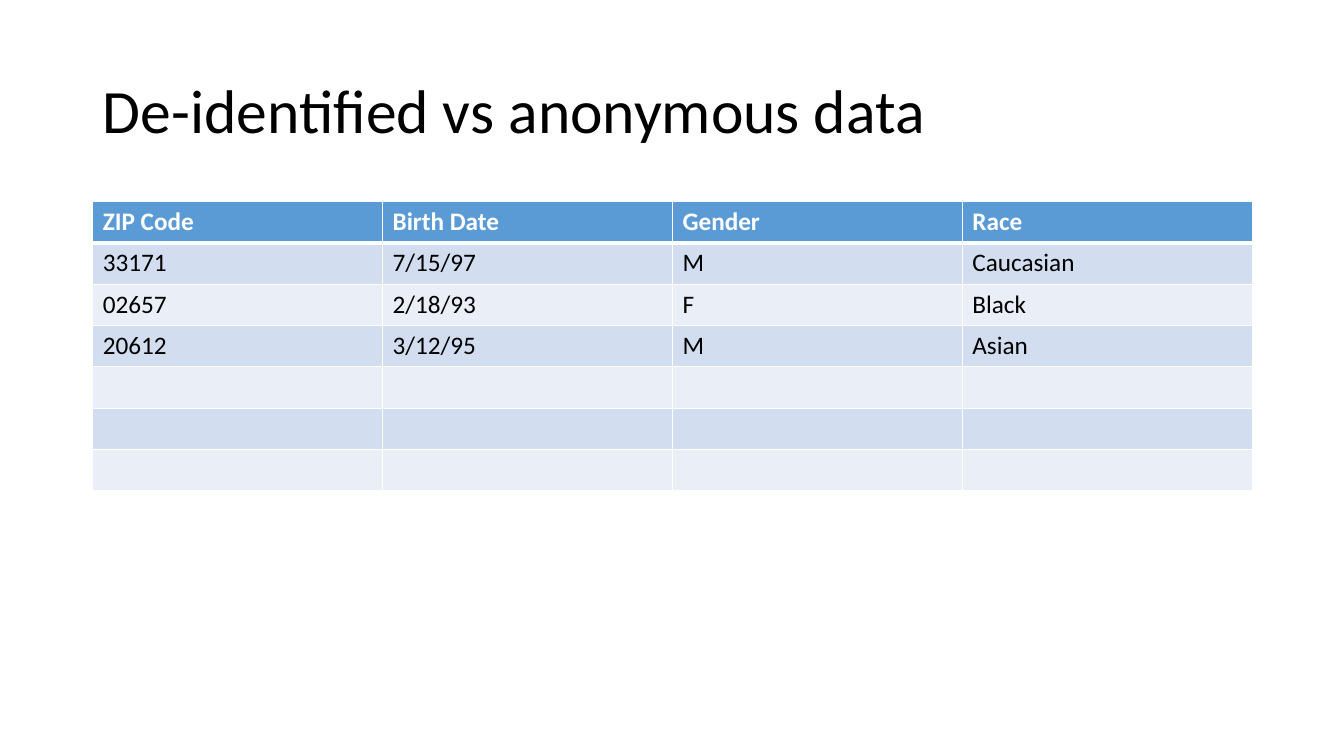
from lxml import etree
from pptx import Presentation
from pptx.dml.color import RGBColor
from pptx.enum.text import MSO_ANCHOR, PP_ALIGN
from pptx.oxml.ns import qn
from pptx.util import Inches, Pt

COLORS = {
    "text": "000000",
    "white": "FFFFFF",
    "header": "5B9BD5",
    "odd_row": "D2DEEF",
    "even_row": "EAEFF7",
}
FONT = "Calibri"
LEFT, WIDTH = 0.92, 11.5
TABLE_TOP, ROW_HEIGHT = 2, 0.41
HEADERS = ["ZIP Code", "Birth Date", "Gender", "Race"]
RECORDS = [
    ["33171", "7/15/97", "M", "Caucasian"],
    ["02657", "2/18/93", "F", "Black"],
    ["20612", "3/12/95", "M", "Asian"],
]
EMPTY_ROWS = 3


def rgb(name):
    return RGBColor.from_string(COLORS[name])


def format_font(font, color, **values):
    for key, value in {"name": FONT, **values}.items():
        setattr(font, key, value)
    font.color.rgb = rgb(color)


def add_title(s, text):
    sp = s.shapes.title
    box = {"left": LEFT, "top": 0.4, "width": WIDTH, "height": 1.45}
    for key, value in box.items():
        setattr(sp, key, Inches(value))
    tf = sp.text_frame
    tf.text = text
    tf.word_wrap = True
    tf.vertical_anchor = MSO_ANCHOR.MIDDLE
    p = tf.paragraphs[0]
    p.alignment = PP_ALIGN.LEFT
    p.line_spacing = 0.9
    format_font(p.runs[0].font, "text", size=Pt(44), bold=False)


def set_borders(cell, widths):
    tc_pr = cell._tc.get_or_add_tcPr()
    for i, (side, width) in enumerate(widths.items()):
        ln = etree.Element(qn(f"a:ln{side}"), w=str(Pt(width)))
        fill = etree.SubElement(ln, qn("a:solidFill"))
        etree.SubElement(fill, qn("a:srgbClr"), val=COLORS["white"])
        tc_pr.insert(i, ln)


def fill_cell(cell, text, row):
    header = row == 0
    fill = "header" if header else "odd_row" if row % 2 else "even_row"
    cell.fill.solid()
    cell.fill.fore_color.rgb = rgb(fill)
    set_borders(cell, {"L": 1, "R": 1, "T": 3 if row == 1 else 1, "B": 3 if header else 1})
    if text:
        cell.text = text
        r = cell.text_frame.paragraphs[0].runs[0]
        format_font(r.font, "white" if header else "text", size=Pt(18), bold=header)


def add_data_table(s, rows):
    columns = len(rows[0])
    frame = s.shapes.add_table(
        len(rows), columns, Inches(LEFT), Inches(TABLE_TOP),
        Inches(WIDTH), Inches(ROW_HEIGHT * len(rows)))
    table = frame.table
    for column in table.columns:
        column.width = Inches(WIDTH / columns)
    for i, values in enumerate(rows):
        table.rows[i].height = Inches(ROW_HEIGHT)
        for j, text in enumerate(values):
            fill_cell(table.cell(i, j), text, i)


def main():
    prs = Presentation()
    prs.slide_width, prs.slide_height = Inches(13.33), Inches(7.5)
    s = prs.slides.add_slide(prs.slide_layouts[5])
    add_title(s, "De-identified vs anonymous data")
    blank = [""] * len(HEADERS)
    add_data_table(s, [HEADERS, *RECORDS, *[blank] * EMPTY_ROWS])
    prs.save("out.pptx")


if __name__ == "__main__":
    main()
